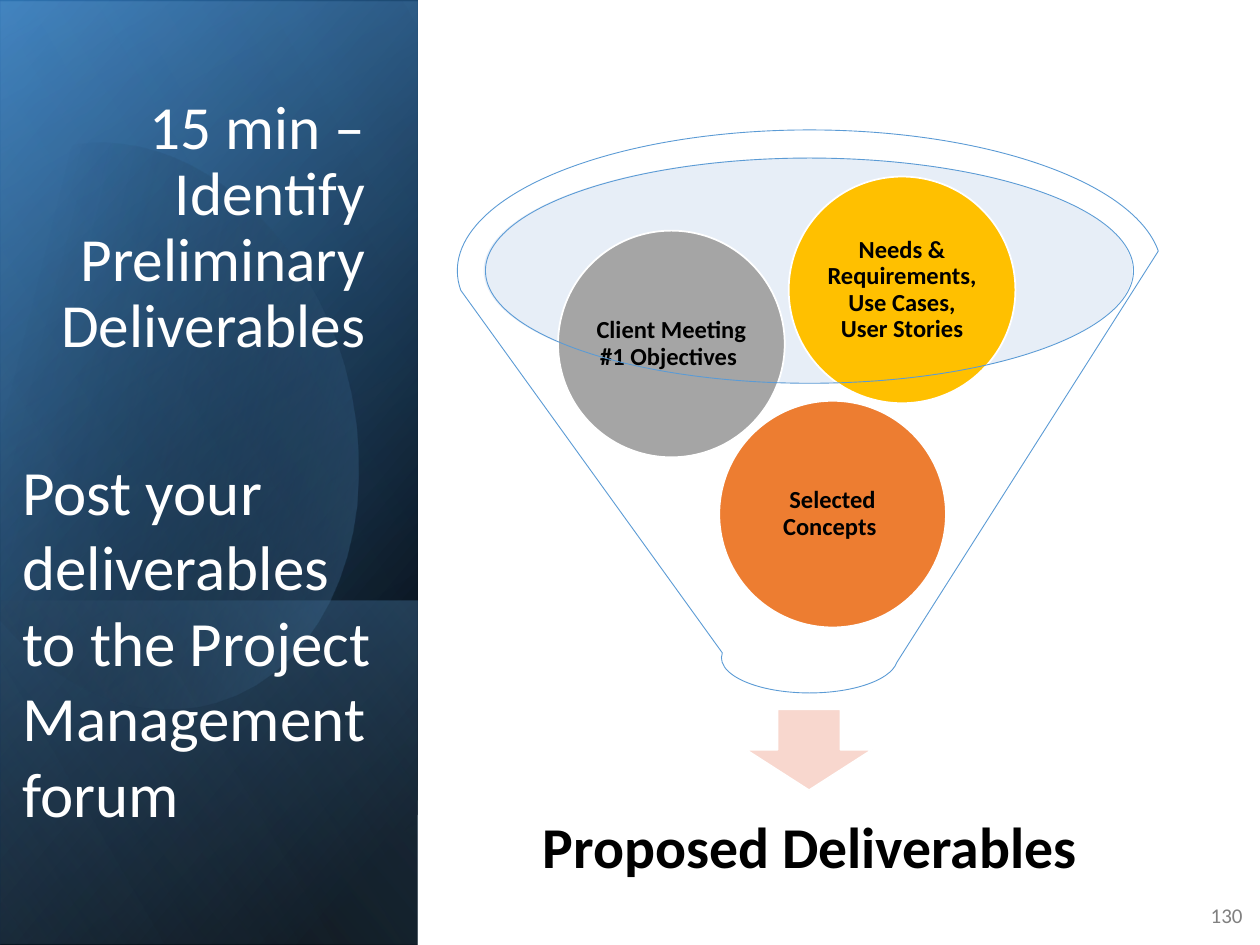
import math

from lxml import etree
from pptx import Presentation
from pptx.dml.color import RGBColor
from pptx.enum.shapes import MSO_SHAPE
from pptx.enum.text import MSO_ANCHOR, PP_ALIGN
from pptx.oxml.ns import qn
from pptx.util import Cm, Pt

RECT, OVAL = MSO_SHAPE.RECTANGLE, MSO_SHAPE.OVAL
ARROW, FUNNEL = MSO_SHAPE.DOWN_ARROW, MSO_SHAPE.FUNNEL
LEFT, CENTER, RIGHT = PP_ALIGN.LEFT, PP_ALIGN.CENTER, PP_ALIGN.RIGHT
TOP, MIDDLE, BOTTOM = MSO_ANCHOR.TOP, MSO_ANCHOR.MIDDLE, MSO_ANCHOR.BOTTOM

FONT = "Calibri"
COLORS = {
    "black": "000000", "white": "FFFFFF", "number": "808080",
    "deep": "2E75B6", "blue": "5B9BD5", "pale": "9DC3E6",
    "mouth": "C4D5EB", "arrow": "F8D7CE",
    "orange": "ED7D31", "gray": "A5A5A5", "gold": "FFC000",
}

# Sidebar layers: box in cm before a quarter turn, stops (position, colour, opacity), angle
PANELS = [
    ((-5.31, 5.31, 19.05, 8.41), [(8, "black", 100), (100, "deep", 100)], 50),
    ((-5.31, 5.36, 19.05, 8.41), [(0, "black", 0), (99, "blue", 46)], 30),
    ((0.74, 11.38, 6.96, 8.41), [(2, "blue", 29), (100, "black", 30)], 130),
]
TOP_PANEL = ((-5.31, 5.28, 19.05, 8.41), [(0, "black", 0), (99, "pale", 11)], 120)

# Glow outline in cm: one point is a line, three points are a Bezier curve
GLOW_START = (2.44, 2.9)
GLOW_SEGMENTS = [
    [(4.34, 3.1), (6.2, 4.88), (6.93, 7.37)],
    [(7.8, 10.46), (6.65, 13.49), (4.34, 14.15)],
    [(2.9, 14.58), (1.35, 13.97), (0.18, 12.7)],
    [(-0.08, 12.4)],
    [(-0.64, 4.22)],
    [(-0.38, 3.91)],
    [(0.05, 3.48), (0.56, 3.18), (1.14, 3)],
    [(1.57, 2.87), (2.01, 2.84), (2.44, 2.9)],
]
GLOW_CENTER = (3.02, 8.5)
GLOW_TURN = -16.1
GLOW_STOPS = [(29, "black", 0), (100, "blue", 43)]
CURVE_STEPS = 16

# Text, box, size, colour, alignment, anchor, line spacing
SIDE_TEXTS = [
    ("15 min – Identify Preliminary Deliverables", (0.97, 1.63, 6.65, 5.77),
     35, "white", RIGHT, BOTTOM, 0.9),
    ("130", (21.16, 17.93, 4.14, 1.02), 12, "number", RIGHT, MIDDLE, 1),
    ("Post your deliverables to the Project Management forum",
     (0.2, 8.99, 7.82, 7.95), 36, "white", LEFT, TOP, 1),
]

MOUTH_BOX = (9.75, 3.18, 13.08, 4.55)
ARROW_BOX = (15.04, 14.3, 2.54, 1.63)
FUNNEL_BOX = (9.22, 2.62, 14.2, 11.35)
RESULT = ("Proposed Deliverables", (10.24, 15.6, 12.17, 3.05))
DIAMETER = 4.57
INPUTS = [
    ("Selected Concepts ", (14.5, 8.08), "orange"),
    ("Client Meeting #1 Objectives ", (11.25, 4.65), "gray"),
    ("Needs & Requirements, Use Cases, User Stories", (15.9, 3.56), "gold"),
]


def rgb(name):
    return RGBColor.from_string(COLORS[name])


def add_shape(slide, kind, box, fill=None, line=None, width=1):
    shape = slide.shapes.add_shape(kind, *map(Cm, box))
    shape.shadow.inherit = False
    if fill:
        shape.fill.solid()
        shape.fill.fore_color.rgb = rgb(fill)
    else:
        shape.fill.background()
    if line:
        shape.line.color.rgb = rgb(line)
        shape.line.width = Pt(width)
    else:
        shape.line.fill.background()
    return shape


def set_alpha(color, percent):
    etree.SubElement(color, qn("a:alpha")).set("val", str(percent * 1000))


def set_gradient(shape, stops, angle):
    properties = shape._element.spPr
    gradient = etree.Element(qn("a:gradFill"), rotWithShape="1")
    stop_list = etree.SubElement(gradient, qn("a:gsLst"))
    for position, name, opacity in stops:
        stop = etree.SubElement(stop_list, qn("a:gs"), pos=str(position * 1000))
        color = etree.SubElement(stop, qn("a:srgbClr"), val=COLORS[name])
        if opacity < 100:
            set_alpha(color, opacity)
    etree.SubElement(gradient, qn("a:lin"), ang=str(angle * 60000), scaled="0")
    properties.replace(properties.find(qn("a:noFill")), gradient)


def add_panel(slide, box, stops, angle):
    panel = add_shape(slide, RECT, box)
    panel.rotation = 90
    panel._element.spPr.find(qn("a:xfrm")).set("flipH", "1")
    set_gradient(panel, stops, angle)


def bezier_point(points, t):
    while len(points) > 1:
        points = [(a[0] + (b[0] - a[0]) * t, a[1] + (b[1] - a[1]) * t)
                  for a, b in zip(points, points[1:])]
    return points[0]


def unturned(point):
    """Turn a point back about the glow's centre, into the frame before rotation."""
    angle = math.radians(-GLOW_TURN)
    x, y = point[0] - GLOW_CENTER[0], point[1] - GLOW_CENTER[1]
    return (Cm(GLOW_CENTER[0] + x * math.cos(angle) - y * math.sin(angle)),
            Cm(GLOW_CENTER[1] + x * math.sin(angle) + y * math.cos(angle)))


def add_glow(slide):
    outline = [GLOW_START]
    for segment in GLOW_SEGMENTS:
        points = [outline[-1]] + segment
        steps = CURVE_STEPS if len(segment) > 1 else 1
        outline += [bezier_point(points, i / steps) for i in range(1, steps + 1)]
    corners = [unturned(point) for point in outline]
    builder = slide.shapes.build_freeform(*corners[0])
    builder.add_line_segments(corners[1:], close=True)
    glow = builder.convert_to_shape()
    glow.shadow.inherit = False
    glow.fill.background()
    glow.line.fill.background()
    glow.rotation = GLOW_TURN
    set_gradient(glow, GLOW_STOPS, 30)


def write(shape, text, size, color, align, anchor, spacing, bold=False, inset=None):
    frame = shape.text_frame
    frame.word_wrap = True
    frame.vertical_anchor = anchor
    if inset is not None:
        frame.margin_left = frame.margin_right = Cm(inset)
        frame.margin_top = frame.margin_bottom = Cm(inset)
    paragraph = frame.paragraphs[0]
    paragraph.alignment = align
    paragraph.line_spacing = spacing
    run = paragraph.add_run()
    run.text = text
    run.font.name = FONT
    run.font.size = Pt(size)
    run.font.bold = bold
    run.font.color.rgb = rgb(color)


def add_funnel_diagram(slide):
    mouth = add_shape(slide, OVAL, MOUTH_BOX, "mouth")
    set_alpha(mouth._element.spPr.find(qn("a:solidFill"))[0], 40)
    add_shape(slide, ARROW, ARROW_BOX, "arrow", "white")
    text, box = RESULT
    result = slide.shapes.add_textbox(*map(Cm, box))
    write(result, text, 33, "black", CENTER, MIDDLE, 0.9, True, 0.66)
    for text, corner, color in INPUTS:
        circle = add_shape(slide, OVAL, (*corner, DIAMETER, DIAMETER), color, "white")
        write(circle, text, 14, "black", CENTER, MIDDLE, 0.9, True, 0.05)
    add_shape(slide, FUNNEL, FUNNEL_BOX, line="blue", width=0.5)


def main():
    deck = Presentation()
    deck.slide_width, deck.slide_height = Cm(25.4), Cm(19.05)
    slide = deck.slides.add_slide(deck.slide_layouts[6])
    for panel in PANELS:
        add_panel(slide, *panel)
    add_glow(slide)
    add_panel(slide, *TOP_PANEL)
    for text, box, *style in SIDE_TEXTS:
        write(slide.shapes.add_textbox(*map(Cm, box)), text, *style)
    add_funnel_diagram(slide)
    deck.save("out.pptx")


if __name__ == "__main__":
    main()
